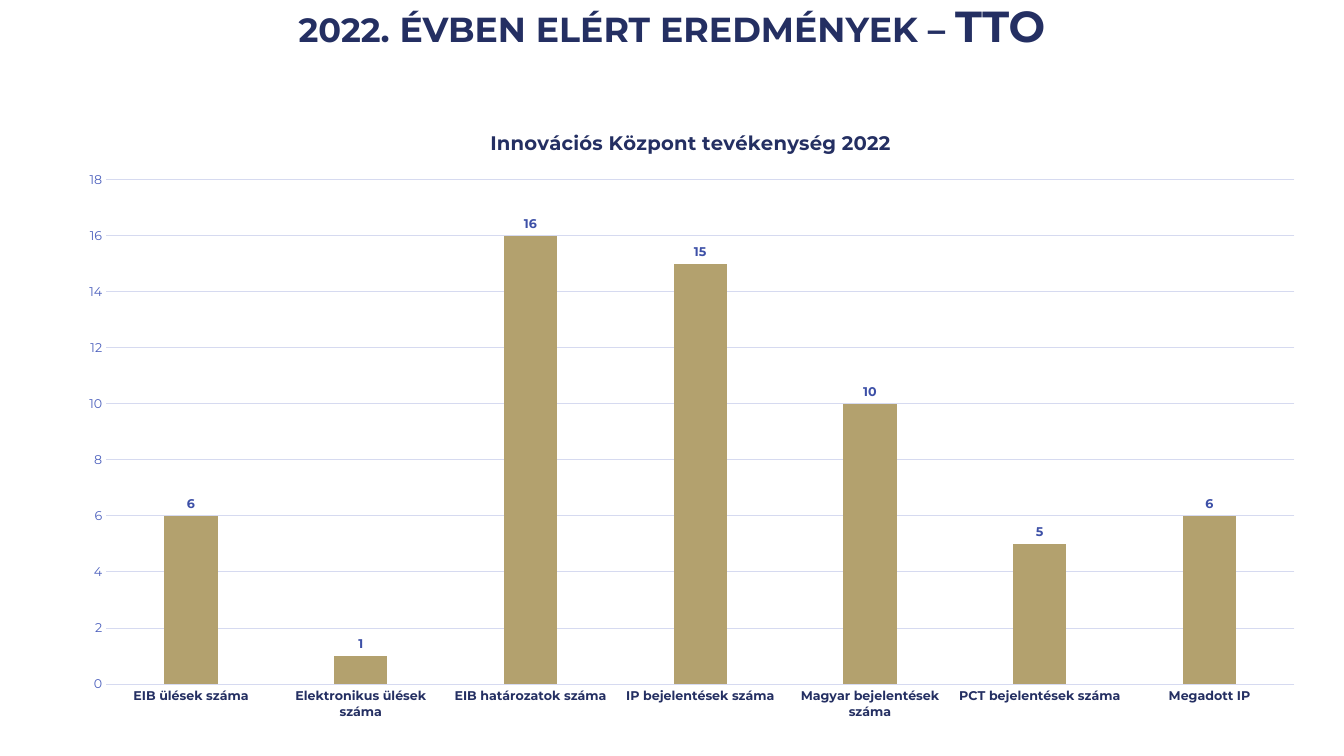
"""Build a slide with a column chart of the innovation centre's 2022 results."""
from dataclasses import dataclass

from lxml import etree
from pptx import Presentation
from pptx.chart.data import CategoryChartData
from pptx.dml.color import RGBColor
from pptx.enum.chart import XL_CHART_TYPE, XL_LABEL_POSITION, XL_TICK_MARK
from pptx.enum.text import MSO_ANCHOR, PP_ALIGN
from pptx.oxml import parse_xml
from pptx.oxml.ns import nsdecls
from pptx.util import Cm, Pt

COLUMN = XL_CHART_TYPE.COLUMN_CLUSTERED
OUTSIDE_END = XL_LABEL_POSITION.OUTSIDE_END
NO_TICK = XL_TICK_MARK.NONE
TOP = MSO_ANCHOR.TOP
CENTER = PP_ALIGN.CENTER

NAVY = RGBColor(0x24, 0x2F, 0x62)
BLUE = RGBColor(0x3D, 0x50, 0xA7)
SOFT_BLUE = RGBColor(0x4C, 0x60, 0xBD)
PALE_BLUE = RGBColor(0xD6, 0xDA, 0xF0)
GOLD = RGBColor(0xB3, 0xA1, 0x6E)
FONT = "Montserrat"


@dataclass(frozen=True)
class Result:
    label: str
    count: int


@dataclass(frozen=True)
class TitlePart:
    text: str
    size: int


RESULTS = [
    Result("EIB ülések száma", 6),
    Result("Elektronikus ülések száma", 1),
    Result("EIB határozatok száma", 16),
    Result("IP bejelentések száma", 15),
    Result("Magyar bejelentések száma", 10),
    Result("PCT bejelentések száma", 5),
    Result("Megadott IP", 6),
]
TITLE = [TitlePart("2022", 30), TitlePart(". évben elért eredmények – TTO", 31)]


def style_font(font, size: float, color: RGBColor, bold: bool = False) -> None:
    """Set typeface, size, colour and weight."""
    font.name = FONT
    font.size = Pt(size)
    font.bold = bold
    font.color.rgb = color


def style_line(line) -> None:
    """Give an axis or grid line its pale hairline."""
    line.color.rgb = PALE_BLUE
    line.width = Pt(0.75)


def place_plot(chart, x: float, y: float, w: float, h: float) -> None:
    """Fix the inner plot area as fractions of the chart."""
    plot_area = chart.plots[0]._element.getparent()
    for old in plot_area.findall("{*}layout"):
        plot_area.remove(old)
    layout = parse_xml(f"<c:layout {nsdecls('c')}><c:manualLayout/></c:layout>")
    settings = {"layoutTarget": "inner", "xMode": "edge", "yMode": "edge",
                "x": x, "y": y, "w": w, "h": h}
    for name, value in settings.items():
        tag = etree.QName(layout).namespace
        etree.SubElement(layout[0], f"{{{tag}}}{name}").set("val", str(value))
    plot_area.insert(0, layout)


def add_title(s) -> None:
    """Add the small-caps slide title."""
    tf = s.shapes.add_textbox(0, 0, Cm(33.87), Cm(1.37)).text_frame
    tf.word_wrap = True
    tf.vertical_anchor = TOP
    p = tf.paragraphs[0]
    p.alignment = CENTER
    p.line_spacing = 0.9
    for part in TITLE:
        r = p.add_run()
        r.text = part.text
        style_font(r.font, part.size, NAVY, True)
        r.font._element.set("cap", "small")


def add_results_chart(s) -> None:
    """Add the column chart of results."""
    data = CategoryChartData()
    data.categories = [result.label for result in RESULTS]
    data.add_series("Series 1", [result.count for result in RESULTS])
    chart = s.shapes.add_chart(
        COLUMN, Cm(1.6), Cm(2.72), Cm(31.62), Cm(15.75), data).chart
    style_font(chart.font, 10, NAVY)
    chart.has_legend = False
    chart.has_title = True
    p = chart.chart_title.text_frame.paragraphs[0]
    p.text = "Innovációs Központ tevékenység 2022"
    style_font(p.font, 14, NAVY, True)
    chart.chart_title.include_in_layout = False
    place_plot(chart, 0.034, 0.115, 0.947, 0.807)

    plot = chart.plots[0]
    plot.gap_width = 219
    plot.overlap = -27
    plot.vary_by_categories = False
    fill = plot.series[0].format.fill
    fill.solid()
    fill.fore_color.rgb = GOLD
    plot.has_data_labels = True
    labels = plot.data_labels
    labels.show_value = True
    labels.position = OUTSIDE_END
    style_font(labels.font, 9, BLUE, True)

    for axis in (chart.category_axis, chart.value_axis):
        axis.major_tick_mark = axis.minor_tick_mark = NO_TICK
    style_font(chart.category_axis.tick_labels.font, 9, NAVY, True)
    style_line(chart.category_axis.format.line)
    counts = chart.value_axis
    style_font(counts.tick_labels.font, 9, SOFT_BLUE)
    counts.format.line.fill.background()
    counts.minimum_scale, counts.maximum_scale, counts.major_unit = 0, 18, 2
    counts.has_major_gridlines = True
    style_line(counts.major_gridlines.format.line)


def main() -> None:
    """Build and save the presentation."""
    prs = Presentation()
    prs.slide_width, prs.slide_height = Cm(33.87), Cm(19.05)
    s = prs.slides.add_slide(prs.slide_layouts[6])
    add_title(s)
    add_results_chart(s)
    prs.save("out.pptx")


if __name__ == "__main__":
    main()
